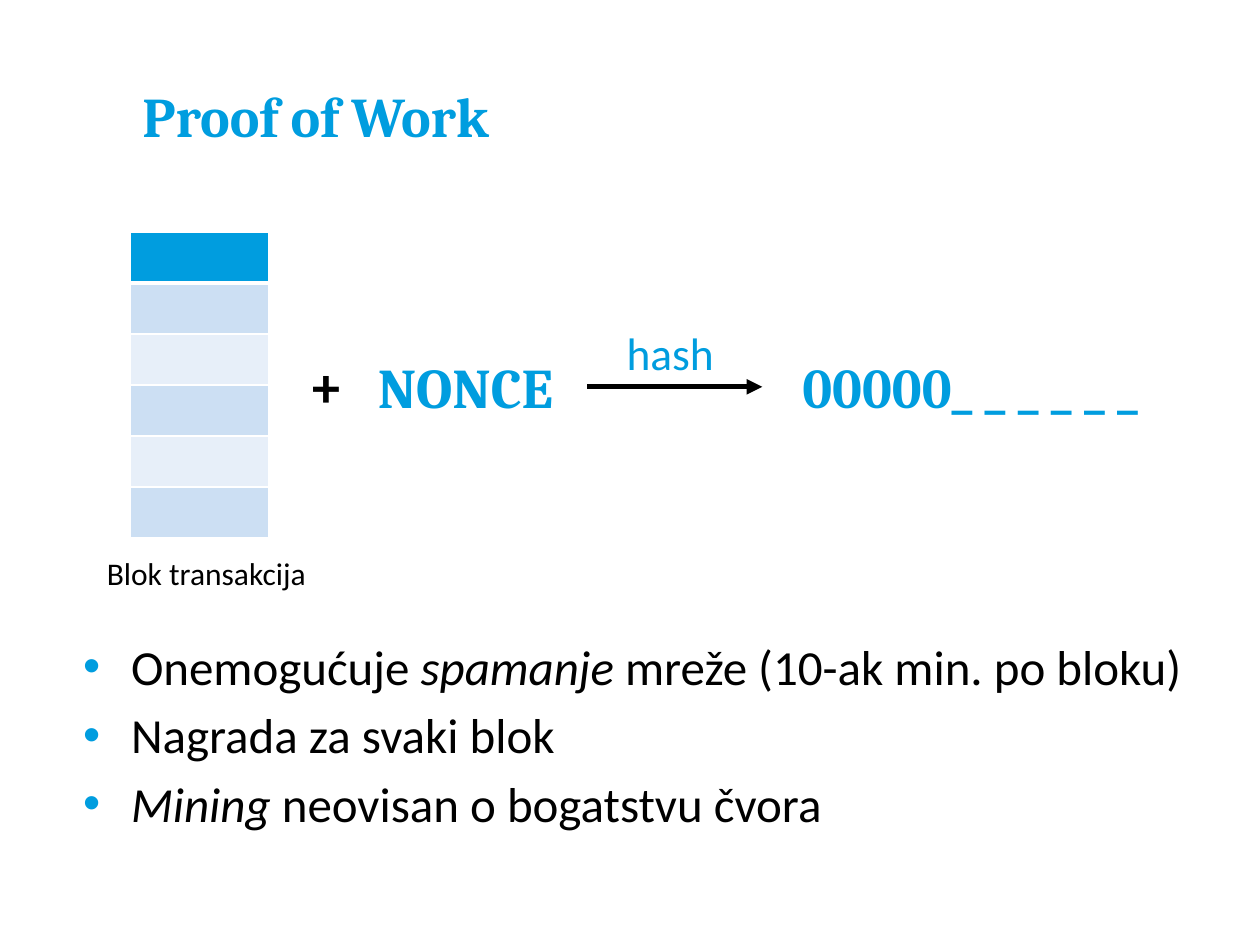
from lxml import etree
from pptx import Presentation
from pptx.dml.color import RGBColor
from pptx.enum.shapes import MSO_CONNECTOR
from pptx.enum.text import MSO_ANCHOR, MSO_AUTO_SIZE, PP_ALIGN
from pptx.oxml.ns import qn
from pptx.util import Inches, Pt

STRAIGHT = MSO_CONNECTOR.STRAIGHT
MIDDLE = MSO_ANCHOR.MIDDLE
NO_AUTOFIT = MSO_AUTO_SIZE.NONE
LEFT, CENTER = PP_ALIGN.LEFT, PP_ALIGN.CENTER
BLUE, BLACK, WHITE = "009DDF", "000000", "FFFFFF"
BAND_DARK, BAND_LIGHT = "CCDFF3", "E7EFF9"
HEADING, BODY = "Cambria", "Calibri"
BULLETS = [
    [("Onemogućuje ", False), ("spamanje", True), (" mreže (10-ak min. po bloku)", False)],
    [("Nagrada za svaki blok", False)],
    [("Mining", True), (" neovisan o bogatstvu čvora", False)],
]
LABELS = [
    ("Blok transakcija", 0.75, 4.35, 1.87, 0.4, 18, BODY, BLACK, False, LEFT),
    ("+", 2.38, 2.74, 0.5, 0.64, 32, BODY, BLACK, True, LEFT),
    ("NONCE", 2.9, 2.75, 1.76, 0.64, 32, HEADING, BLUE, True, LEFT),
    ("hash", 4.44, 2.53, 1.76, 0.54, 26, BODY, BLUE, False, CENTER),
    ("00000_ _ _ _ _ _", 6.27, 2.75, 3.23, 0.64, 32, HEADING, BLUE, True, LEFT),
]


def color(value):
    return RGBColor.from_string(value)


def place(shape, left, top, width, height):
    shape.left, shape.top = Inches(left), Inches(top)
    shape.width, shape.height = Inches(width), Inches(height)


def add_span(para, text, size, face, shade, bold=False, italic=False):
    span = para.add_run()
    span.text = text
    span.font.size = Pt(size)
    span.font.name = face
    span.font.color.rgb = color(shade)
    span.font.bold = bold
    span.font.italic = italic


def set_title(page):
    title = page.shapes.title
    place(title, 1.03, 0.31, 8.47, 1.21)
    frame = title.text_frame
    frame.auto_size = NO_AUTOFIT
    frame.vertical_anchor = MIDDLE
    para = frame.paragraphs[0]
    para.alignment = LEFT
    add_span(para, "Proof of Work", 32, HEADING, BLUE, bold=True)


def add_bullet(para):
    properties = para._p.get_or_add_pPr()
    properties.set("marL", str(Inches(0.38)))
    properties.set("indent", str(-Inches(0.38)))
    bullet_color = etree.SubElement(properties, qn("a:buClr"))
    etree.SubElement(bullet_color, qn("a:srgbClr"), val=BLUE)
    etree.SubElement(properties, qn("a:buFont"), typeface="Arial")
    etree.SubElement(properties, qn("a:buChar"), char="•")


def set_bullets(page):
    body = page.placeholders[1]
    place(body, 0.56, 5, 9.25, 1.72)
    frame = body.text_frame
    frame.auto_size = NO_AUTOFIT
    for index, spans in enumerate(BULLETS):
        para = frame.add_paragraph() if index else frame.paragraphs[0]
        add_bullet(para)
        para.space_before = Pt(5.6 if index else 0)
        for text, italic in spans:
            add_span(para, text, 28, BODY, BLACK, italic=italic)


def add_label(page, text, left, top, width, height, size, face, shade, bold, alignment):
    box = page.shapes.add_textbox(Inches(left), Inches(top), Inches(width), Inches(height))
    box.text_frame.word_wrap = True
    para = box.text_frame.paragraphs[0]
    para.alignment = alignment
    add_span(para, text, size, face, shade, bold)


def add_arrow(page, left, right, top):
    arrow = page.shapes.add_connector(
        STRAIGHT, Inches(left), Inches(top), Inches(right), Inches(top))
    arrow.line.color.rgb = color(BLACK)
    arrow.line.width = Pt(3)
    etree.SubElement(arrow.line._get_or_add_ln(), qn("a:tailEnd"), type="triangle")
    etree.SubElement(arrow._element.spPr, qn("a:effectLst"))


def set_borders(cell, widths):
    properties = cell._tc.get_or_add_tcPr()
    for index, (side, width) in enumerate(widths.items()):
        line = etree.Element(qn("a:ln" + side), w=str(Pt(width)))
        fill = etree.SubElement(line, qn("a:solidFill"))
        etree.SubElement(fill, qn("a:srgbClr"), val=WHITE)
        properties.insert(index, line)


def add_block_table(page):
    fills = [BLUE, BAND_DARK, BAND_LIGHT, BAND_DARK, BAND_LIGHT, BAND_DARK]
    table = page.shapes.add_table(
        len(fills), 1, Inches(1.03), Inches(1.84), Inches(1.1), Inches(2.43)).table
    for index, shade in enumerate(fills):
        cell = table.cell(index, 0)
        cell.fill.solid()
        cell.fill.fore_color.rgb = color(shade)
        top = 3 if index == 1 else 1
        bottom = 3 if index == 0 else 1
        set_borders(cell, {"L": 1, "R": 1, "T": top, "B": bottom})


def main():
    deck = Presentation()
    deck.slide_width, deck.slide_height = Inches(10), Inches(7.5)
    page = deck.slides.add_slide(deck.slide_layouts[1])
    set_title(page)
    set_bullets(page)
    for label in LABELS:
        add_label(page, *label)
    add_arrow(page, 4.66, 6.05, 3.07)
    add_block_table(page)
    deck.save("out.pptx")


if __name__ == "__main__":
    main()
